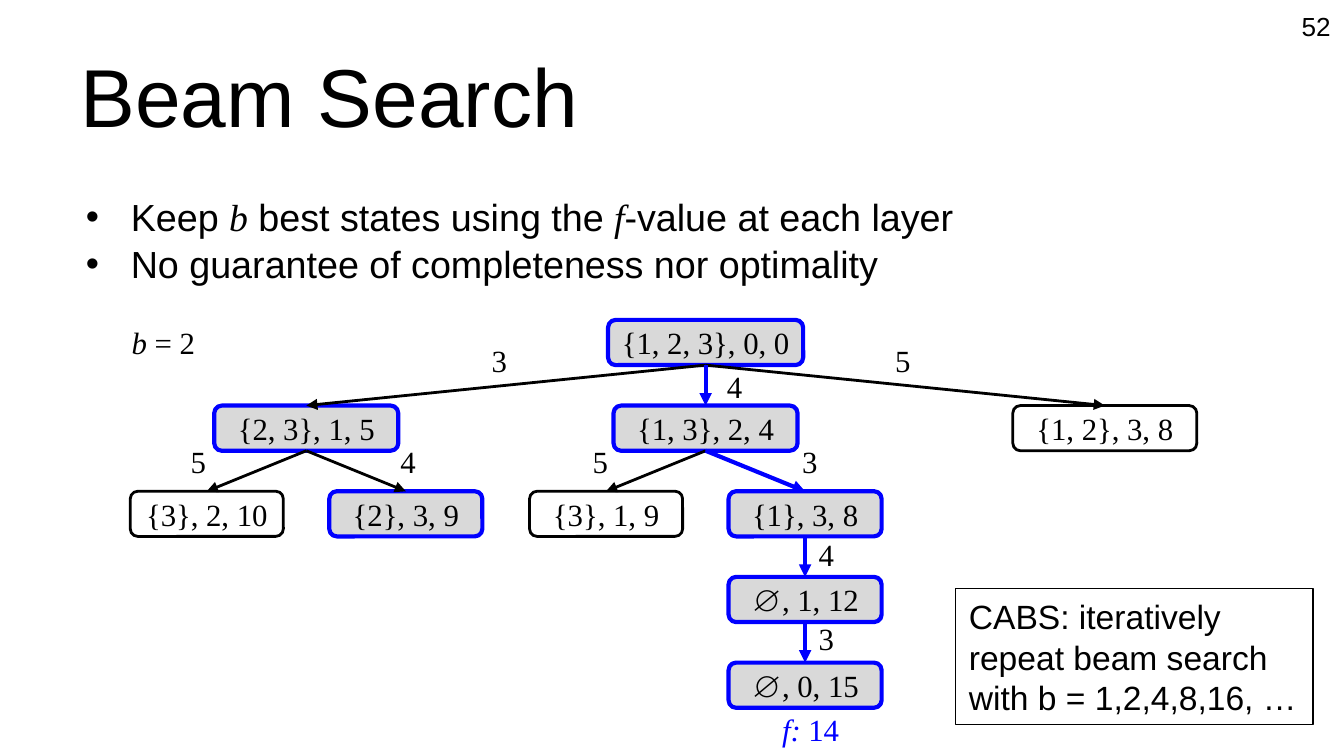
"""Build a slide that explains beam search with a layered state tree."""
from lxml import etree
from pptx import Presentation
from pptx.dml.color import RGBColor
from pptx.enum import shapes as sh, text as tx
from pptx.oxml import ns
from pptx.util import Pt

HUES = {"ink": "000000", "beam": "0000FF", "kept": "D9D9D9"}
SANS = {"name": "Arial"}
SERIF = {"name": "Times New Roman", "size": Pt(16.5)}
MID = tx.MSO_ANCHOR.MIDDLE
LEFT, CENTER, RIGHT = tx.PP_ALIGN.LEFT, tx.PP_ALIGN.CENTER, tx.PP_ALIGN.RIGHT
SIDES = ("left", "top", "right", "bottom")

ROOT_X, TOP, STEP, TALL = 378, 171.4, 45.9, 24.2
WIDE, FORK = 213.9, 53.3
NODES = {
    "root": (0, 0, 104.5, "{1, 2, 3}, 0, 0", True),
    "west": (-WIDE, 1, 98.6, "{2, 3}, 1, 5", True),
    "mid": (0, 1, 98.6, "{1, 3}, 2, 4", True),
    "east": (WIDE, 1, 98.6, "{1, 2}, 3, 8", False),
    "west1": (-WIDE - FORK, 2, 82, "{3}, 2, 10", False),
    "west2": (-WIDE + FORK, 2, 82, "{2}, 3, 9", True),
    "mid1": (-FORK, 2, 82, "{3}, 1, 9", False),
    "mid2": (FORK, 2, 82, "{1}, 3, 8", True),
    "next": (FORK, 3, 82, "∅, 1, 12", True),
    "goal": (FORK, 4, 82, "∅, 0, 15", True),
}
EDGES = [
    ("root", "west", "3", False, -3, -12.6),
    ("root", "east", "5", False, -0.7, -12.6),
    ("root", "mid", "4", True, 16.2, 1),
    ("west", "west1", "5", False, -30.6, -4.7),
    ("west", "west2", "4", False, 28.5, -4.7),
    ("mid", "mid1", "5", False, -29.2, -4.7),
    ("mid", "mid2", "3", True, 29.8, -4.7),
    ("mid2", "next", "4", True, 12, -0.5),
    ("next", "goal", "3", True, 12, -1.8),
]


def color(key):
    """Return the colour stored under a key."""
    return RGBColor.from_string(HUES[key])


def apply(item, **values):
    """Set each given attribute on an item."""
    for key, value in values.items():
        setattr(item, key, value)


def place(shape, box):
    """Move a shape to a box given in points."""
    apply(shape, **dict(zip(("left", "top", "width", "height"), map(Pt, box))))


def write(para, runs, hue="ink", align=LEFT, **base):
    """Fill a paragraph with (text, font values) runs."""
    para.alignment = align
    for words, extra in runs:
        for num, line in enumerate(words.split("\n")):
            if num:
                para.add_line_break()
            run = para.add_run()
            run.text = line
            apply(run.font, **{**base, **extra})
            run.font.color.rgb = color(hue)


def frame(shape, pad, **values):
    """Set the padding and layout of a text frame."""
    body = shape.text_frame
    apply(body, **{"margin_" + side: Pt(pad) for side in SIDES})
    apply(body, **{"word_wrap": True, "auto_size": tx.MSO_AUTO_SIZE.NONE, **values})
    return body


def label(slide, box, runs, pad=5, anchor=tx.MSO_ANCHOR.TOP, **style):
    """Add a one-paragraph text box."""
    area = slide.shapes.add_textbox(*map(Pt, box))
    body = frame(area, pad, vertical_anchor=anchor)
    write(body.paragraphs[0], runs, **style)


def panel(slide, kind, box, hue, weight, fill=None):
    """Add an outlined shape, filled when a colour is given."""
    shape = slide.shapes.add_shape(kind, *map(Pt, box))
    shape.shadow.inherit = False
    if fill:
        shape.fill.solid()
        shape.fill.fore_color.rgb = color(fill)
    else:
        shape.fill.background()
    shape.line.color.rgb = color(hue)
    shape.line.width = Pt(weight)
    return shape


def heading(slide, box):
    """Format the title placeholder."""
    title = slide.shapes.title
    place(title, box)
    body = frame(title, 7.2, vertical_anchor=MID)
    write(body.paragraphs[0], [("Beam Search", {})], size=Pt(44), **SANS)


def points(slide, box):
    """Add the bulleted statements."""
    area = slide.shapes.add_textbox(*map(Pt, box))
    body = frame(area, 7.2)
    lines = [
        [("Keep ", {}), ("b", {"name": "Times New Roman", "italic": True}),
         (" best states using the ", {}),
         ("f", {"name": "Times New Roman", "italic": True}),
         ("-value at each layer", {})],
        [("No guarantee of completeness nor optimality", {})],
    ]
    for num, runs in enumerate(lines):
        para = body.add_paragraph() if num else body.paragraphs[0]
        props = para._p.get_or_add_pPr()
        props.set("marL", str(Pt(27)))
        props.set("indent", str(Pt(-24)))
        font = etree.SubElement(props, ns.qn("a:buFont"))
        font.set("typeface", "Arial")
        etree.SubElement(props, ns.qn("a:buChar")).set("char", "•")
        if num:
            para.space_before = Pt(1)
        write(para, runs, size=Pt(20.2), **SANS)


def node(slide, box, words, kept):
    """Add one state of the tree."""
    look = ("beam", 2.25, "kept") if kept else ("ink", 1.5)
    shape = panel(slide, sh.MSO_SHAPE.ROUNDED_RECTANGLE, box, *look)
    body = frame(shape, 5, vertical_anchor=MID)
    write(body.paragraphs[0], [(words, {})], align=CENTER, **SERIF)
    return shape


def arrow(slide, start, end, best):
    """Connect the foot of one state to the head of another."""
    line = slide.shapes.add_connector(sh.MSO_CONNECTOR.STRAIGHT, 0, 0, 0, 0)
    line.begin_connect(start, 2)
    line.end_connect(end, 0)
    line.line.color.rgb = color("beam" if best else "ink")
    line.line.width = Pt(2.25 if best else 1.5)
    tip = etree.SubElement(line.line._get_or_add_ln(), ns.qn("a:tailEnd"))
    tip.set("type", "triangle")
    etree.SubElement(line._element.spPr, ns.qn("a:effectLst"))


def tree(slide, mid, top):
    """Draw the search tree around a centre line."""
    made = {}
    for key, (shift, layer, width, words, kept) in NODES.items():
        box = (mid + shift - width / 2, top + layer * STEP, width, TALL)
        made[key] = node(slide, box, words, kept)
    for start, end, cost, best, dx, dy in EDGES:
        arrow(slide, made[start], made[end], best)
        x = mid + (NODES[start][0] + NODES[end][0]) / 2 + dx
        y = top + (NODES[start][1] + 0.5) * STEP + TALL / 2 + dy
        label(slide, (x - 9.7, y - 15.5, 19.4, 31), [(cost, {})], **SERIF)
    label(slide, (mid + 36, top + 204.5, 43.2, 31),
          [("f:", {"italic": True}), (" 14", {})], hue="beam", **SERIF)
    label(slide, (mid - 312.5, top - 2.9, 56.2, 31),
          [("b", {"italic": True}), (" = 2", {})], **SERIF)


def note(slide, box):
    """Add the framed remark on repeated search."""
    shape = panel(slide, sh.MSO_SHAPE.RECTANGLE, box, "ink", 0.75)
    body = frame(shape, 7.2, margin_top=Pt(3.6), margin_bottom=Pt(3.6),
                 word_wrap=False, vertical_anchor=MID)
    words = "CABS: iteratively\nrepeat beam search\nwith b = 1,2,4,8,16, …"
    write(body.paragraphs[0], [(words, {})], size=Pt(18), **SANS)


def main():
    """Assemble and save the slide."""
    deck = Presentation()
    apply(deck, slide_width=Pt(720), slide_height=Pt(405))
    slide = deck.slides.add_slide(deck.slide_layouts.get_by_name("Title Only"))
    heading(slide, (36, 16.6, 648, 67.7))
    points(slide, (36, 96.5, 648, 265))
    label(slide, (671.8, 0, 48.2, 28), [("52", {})], pad=7.2, anchor=MID,
          align=RIGHT, size=Pt(14), **SANS)
    tree(slide, ROOT_X, TOP)
    note(slide, (512, 315.4, 191.5, 72.7))
    deck.save("out.pptx")


if __name__ == "__main__":
    main()
